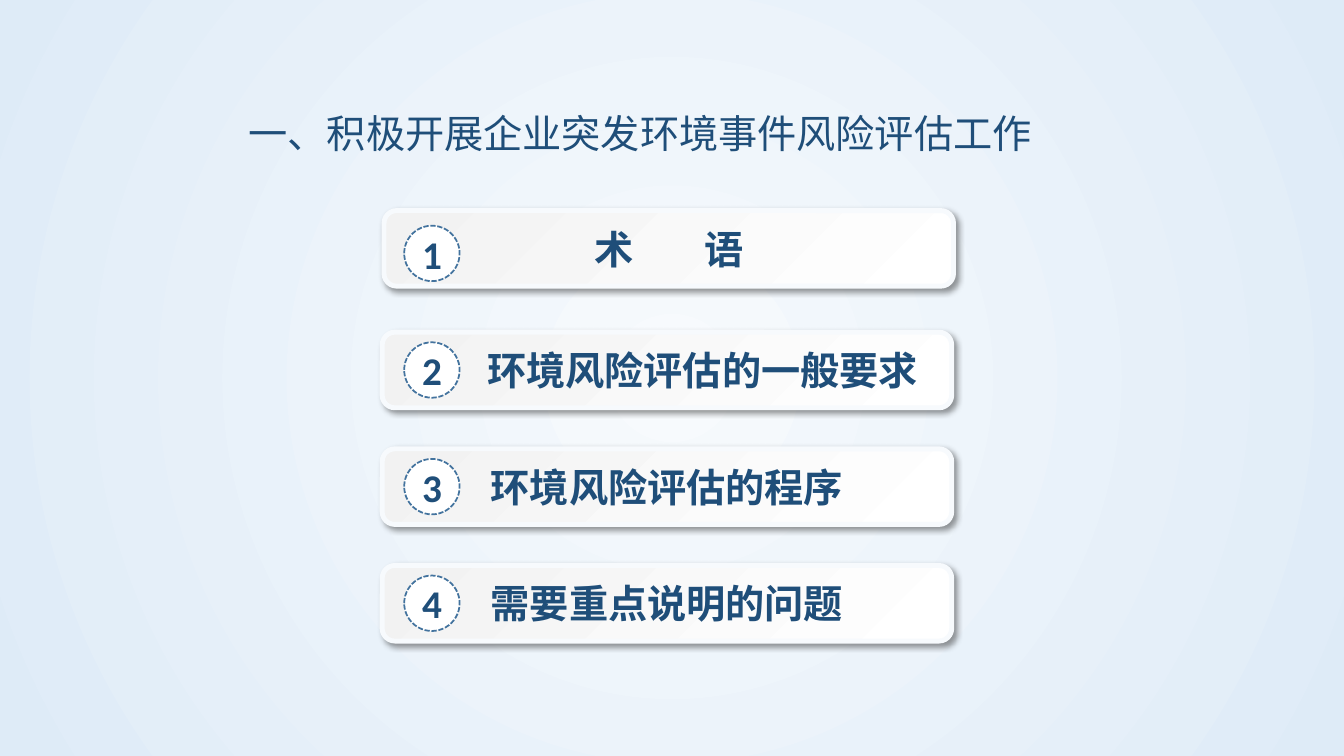
import pptx
import pptx.dml.color
import pptx.enum.dml
import pptx.enum.shapes
import pptx.enum.text
import pptx.oxml
import pptx.oxml.ns
import pptx.util

Pt = pptx.util.Pt
Shapes = pptx.enum.shapes.MSO_SHAPE
Anchor = pptx.enum.text.MSO_ANCHOR
Align = pptx.enum.text.PP_ALIGN
NAMESPACE = pptx.oxml.ns.nsdecls("a")
qualified = pptx.oxml.ns.qn

TITLE = "一、积极开展企业突发环境事件风险评估工作"
ITEMS = [
    {"runs": [("术", 0), (" ", 44), ("语", 0)], "left": 274.3, "rise": 10.8, "indent": 0},
    {"runs": [("环境风险评估的一般要求", 0)], "left": 273, "rise": 7.2, "indent": 50.6},
    {"runs": [("环境风险评估的程序", 0)], "left": 273, "rise": 7.2, "indent": 0},
    {"runs": [("需要重点说明的问题", 0)], "left": 273, "rise": 7.2, "indent": 0},
]
NAVY = "1F4E79"
CHINESE_FONT = "Noto Sans CJK SC"
CARD_WIDTH, CARD_HEIGHT = 406.8, 54
BADGE_LEFT, BADGE_TOP, BADGE_SIZE = 288.7, 161.2, 39.6
ROW_STEP = 83.3
INSET = 7.2
DIAGONAL = '<a:lin ang="2700000" scaled="0"/>'
DOWNWARD = '<a:lin ang="5400000" scaled="0"/>'
CIRCULAR = ('<a:path path="circle"><a:fillToRect l="50000" t="50000" r="50000" b="50000"/>'
            '</a:path>')


def color(value):
    return pptx.dml.color.RGBColor.from_string(value)


def set_gradient(fill, owner, start, end, shade):
    fill.gradient()
    gradient = owner.find(qualified("a:gradFill"))
    owner.replace(gradient, pptx.oxml.parse_xml(
        f'<a:gradFill {NAMESPACE} rotWithShape="1"><a:gsLst>'
        f'<a:gs pos="0"><a:srgbClr val="{start}"/></a:gs>'
        f'<a:gs pos="100000"><a:srgbClr val="{end}"/></a:gs>'
        f'</a:gsLst>{shade}</a:gradFill>'))


def write_text(frame, text, font="Calibri", bold=False, align=Align.LEFT, anchor=Anchor.TOP):
    frame.word_wrap = True
    frame.vertical_anchor = anchor
    paragraph = frame.paragraphs[0]
    paragraph.alignment = align
    for words, spacing in text:
        run = paragraph.add_run()
        run.text = words
        run.font.size = Pt(28)
        run.font.bold = bold
        run.font.name = font
        run.font.color.rgb = color(NAVY)
        properties = run._r.get_or_add_rPr()
        properties.append(pptx.oxml.parse_xml(f'<a:ea {NAMESPACE} typeface="{CHINESE_FONT}"/>'))
        if spacing:
            properties.set("spc", str(spacing * 100))


def add_shadow(shape):
    shape.shadow.inherit = False
    effects = shape._element.spPr.find(qualified("a:effectLst"))
    effects.append(pptx.oxml.parse_xml(
        f'<a:outerShdw {NAMESPACE} blurRad="{Pt(4)}" dist="{Pt(3)}" dir="2700000" '
        'algn="tl" rotWithShape="0"><a:srgbClr val="000000"><a:alpha val="40000"/>'
        '</a:srgbClr></a:outerShdw>'))


def add_card(shapes, item, top):
    card = shapes.add_shape(Shapes.ROUNDED_RECTANGLE, Pt(item["left"]), Pt(top),
                            Pt(CARD_WIDTH), Pt(CARD_HEIGHT))
    properties = card._element.spPr
    set_gradient(card.fill, properties, "F2F2F2", "FFFFFF", DIAGONAL)
    card.line.width = Pt(3.5)
    set_gradient(card.line.fill, properties.find(qualified("a:ln")), "F7FAFD", "CEE1F2", DOWNWARD)
    add_shadow(card)
    card.text_frame.margin_left = Pt(INSET + item["indent"])
    write_text(card.text_frame, item["runs"], bold=True, align=Align.CENTER, anchor=Anchor.MIDDLE)


def add_badge(shapes, number, top):
    badge = shapes.add_shape(Shapes.OVAL, Pt(BADGE_LEFT), Pt(top), Pt(BADGE_SIZE), Pt(BADGE_SIZE))
    badge.shadow.inherit = False
    badge.fill.solid()
    badge.fill.fore_color.rgb = color("FFFFFF")
    badge.line.color.rgb = color("43739E")
    badge.line.width = Pt(1.25)
    badge.line.dash_style = pptx.enum.dml.MSO_LINE.SQUARE_DOT
    write_text(badge.text_frame, [(str(number), 0)], bold=True, align=Align.CENTER,
               anchor=Anchor.MIDDLE)


def set_background(slide):
    fill = slide.background.fill
    properties = slide._element.find(".//" + qualified("p:bgPr"))
    set_gradient(fill, properties, "F7FAFD", "DEEBF7", CIRCULAR)


def main():
    presentation = pptx.Presentation()
    presentation.slide_width, presentation.slide_height = Pt(960), Pt(540)
    slide = presentation.slides.add_slide(presentation.slide_layouts[6])
    set_background(slide)
    title = slide.shapes.add_textbox(Pt(170.6), Pt(74.9), Pt(688.3), Pt(41))
    write_text(title.text_frame, [(TITLE, 0)], font=CHINESE_FONT)
    for index, item in enumerate(ITEMS):
        group = slide.shapes.add_group_shape()
        badge_top = BADGE_TOP + index * ROW_STEP
        add_card(group.shapes, item, badge_top - item["rise"])
        add_badge(group.shapes, index + 1, badge_top)
    presentation.save("out.pptx")


if __name__ == "__main__":
    main()
